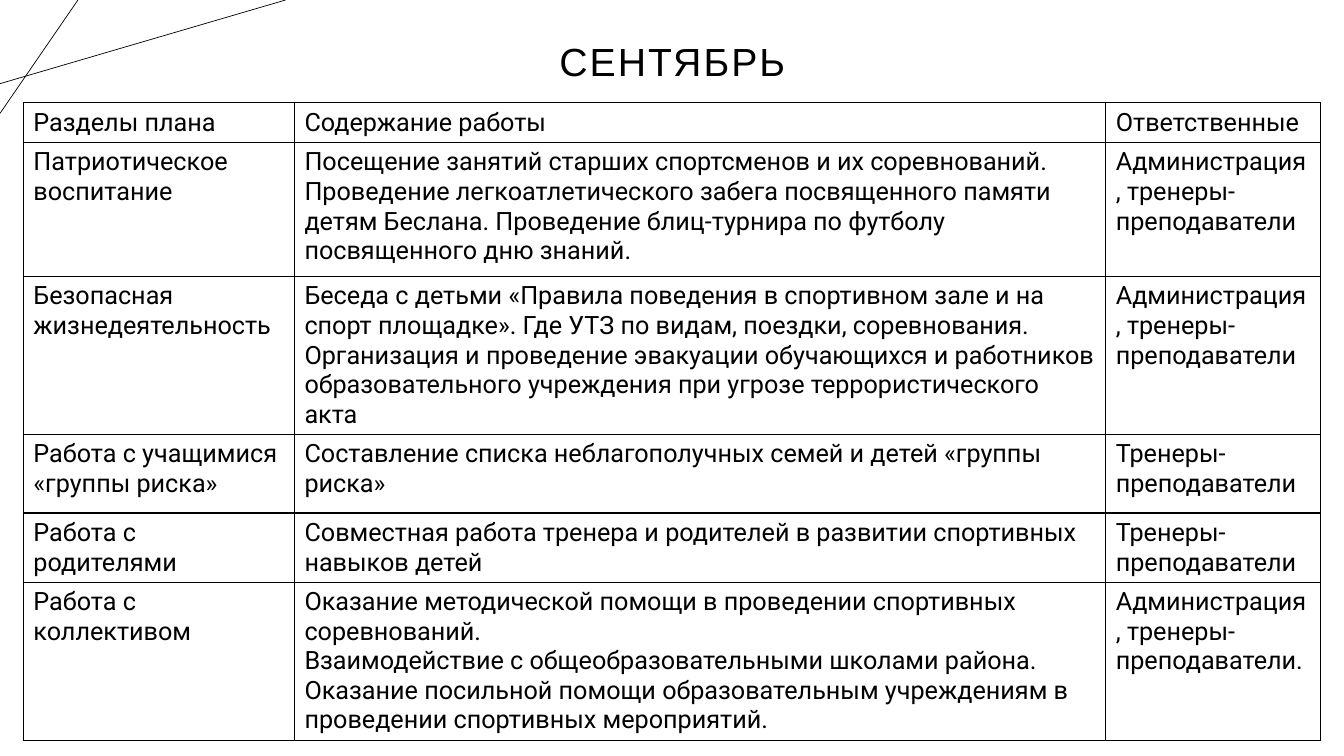
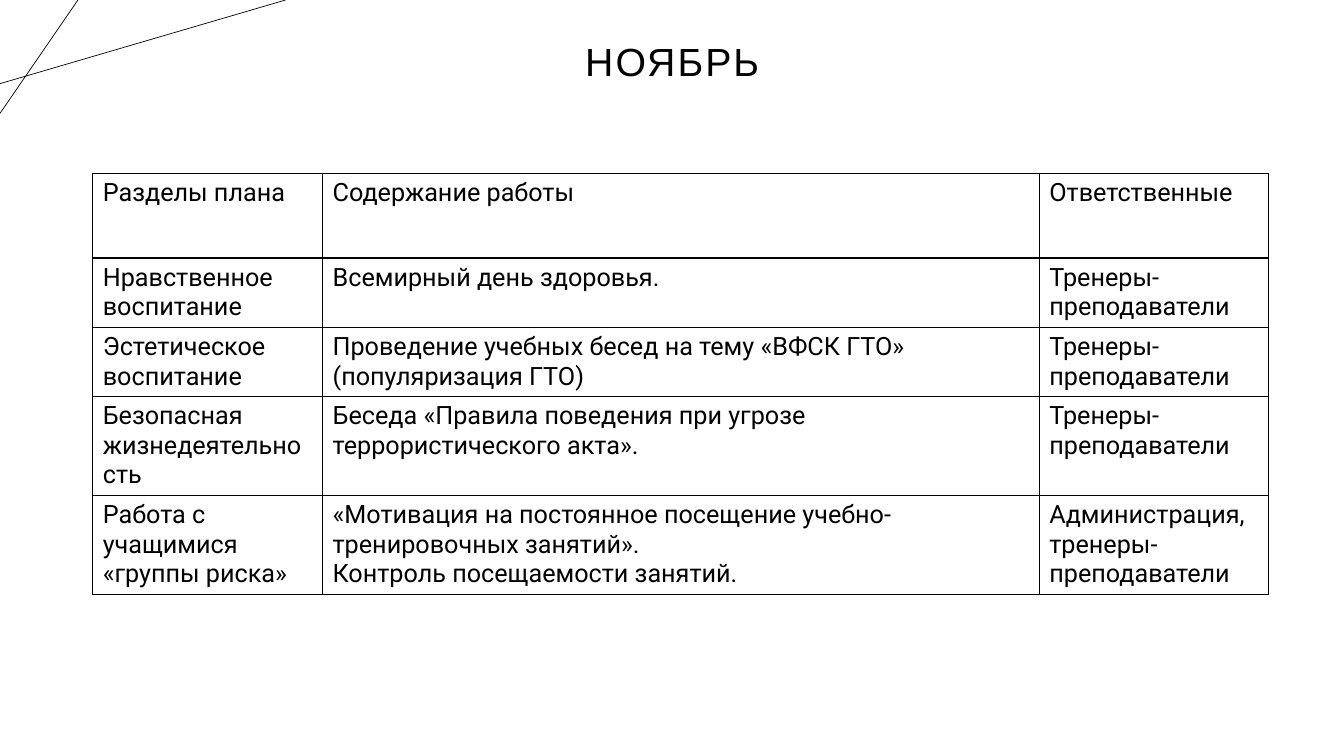
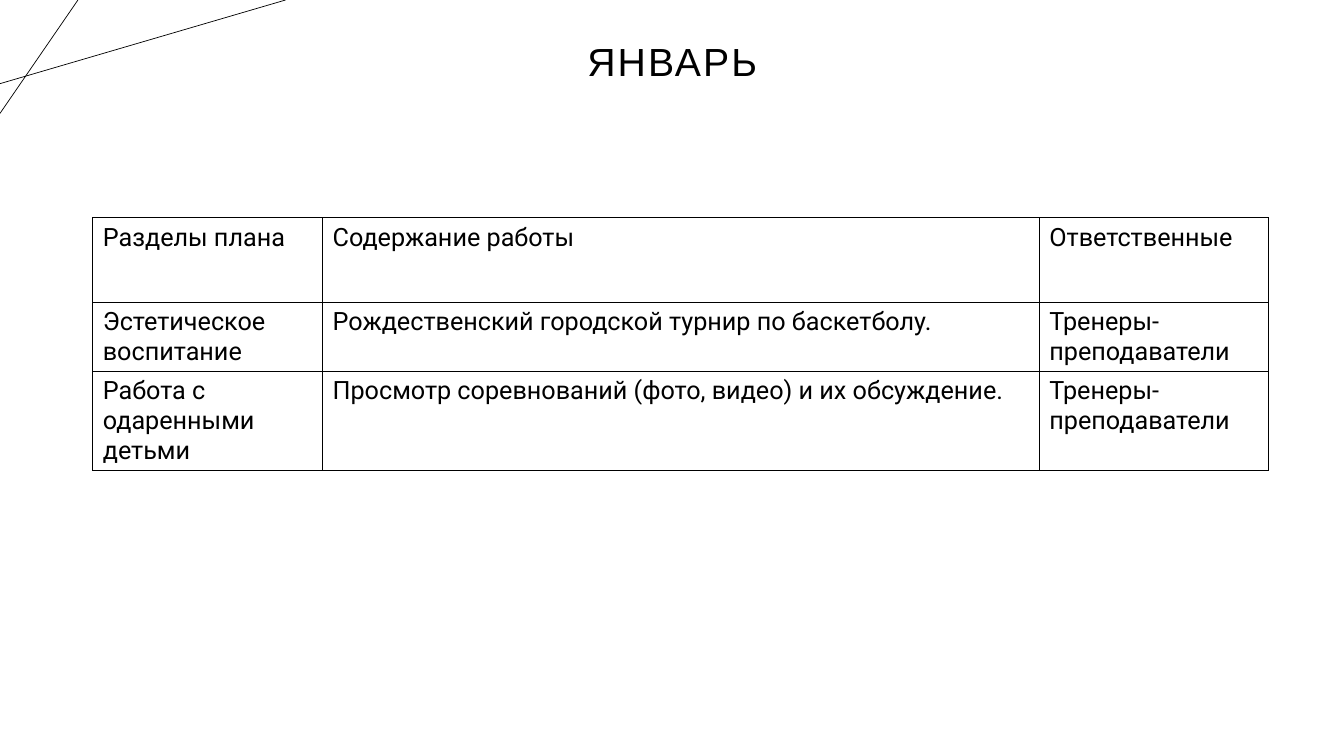
"""Build three monthly plan slides, with lengths in percent of the slide."""
import pptx
import pptx.util
import pptx.dml.color
import pptx.enum.shapes
import pptx.enum.text
import pptx.oxml.ns
import lxml.etree

Pt = pptx.util.Pt
WIDE, HIGH = pptx.util.Inches(13.333), pptx.util.Inches(7.5)
HUES = {"ink": "000000", "page": "FFFFFF"}
FONTS = {"title": "Arial", "body": "Roboto"}
RAYS = [(0, 11.07, 21.25, 0), (5.8, 0, 0, 15)]

HEAD = ("Разделы плана", "Содержание работы", "Ответственные")
COACH = "Тренеры-преподаватели"
STAFF = "Администрация, тренеры-преподаватели"
SAFE = "Безопасная жизнедеятельность"
RISK = "Работа с учащимися «группы риска»"
ART = "Эстетическое воспитание"

BROAD = (20.17, 60.37, 15.97)
SLIM = (17.1, 53.33, 17.03)

PLANS = [
    {
        "month": "СЕНТЯБРЬ", "left": 1.74, "top": 13.6, "cols": BROAD,
        "rows": (3.47, 17.73, 9.6, 10.4, 8.67, 8.67),
        "cells": [
            HEAD,
            ("Патриотическое воспитание",
             "Посещение занятий старших спортсменов и их соревнований. "
             "Проведение легкоатлетического забега посвященного памяти детям Беслана. "
             "Проведение блиц-турнира по футболу посвященного дню знаний.",
             STAFF),
            (SAFE,
             "Беседа с детьми «Правила поведения в спортивном зале и на спорт площадке». "
             "Где УТЗ по видам, поездки, соревнования.\n"
             "Организация и проведение эвакуации обучающихся и работников "
             "образовательного учреждения при угрозе террористического акта",
             STAFF),
            (RISK, "Составление списка неблагополучных семей и детей «группы риска»", COACH),
            ("Работа с родителями",
             "Совместная работа тренера и родителей в развитии спортивных навыков детей",
             COACH),
            ("Работа с коллективом",
             "Оказание методической помощи в проведении спортивных соревнований.\n"
             "Взаимодействие с общеобразовательными школами района.\n"
             "Оказание посильной помощи образовательным учреждениям "
             "в проведении спортивных мероприятий.",
             STAFF + "."),
        ],
    },
    {
        "month": "НОЯБРЬ", "left": 6.9, "top": 22.93, "cols": SLIM,
        "rows": (11.2,) + (8.27,) * 4,
        "cells": [
            HEAD,
            ("Нравственное воспитание", "Всемирный день здоровья.", COACH),
            (ART, "Проведение учебных бесед на тему «ВФСК ГТО» (популяризация ГТО)", COACH),
            (SAFE, "Беседа «Правила поведения при угрозе террористического акта».", COACH),
            (RISK,
             "«Мотивация на постоянное посещение учебно-тренировочных занятий».\n"
             "Контроль посещаемости занятий.",
             STAFF),
        ],
    },
    {
        "month": "ЯНВАРЬ", "left": 6.9, "top": 28.8, "cols": SLIM,
        "rows": (11.2,) + (8.27,) * 2,
        "cells": [
            HEAD,
            (ART, "Рождественский городской турнир по баскетболу.", COACH),
            ("Работа с одаренными детьми",
             "Просмотр соревнований (фото, видео) и их обсуждение.", COACH),
        ],
    },
]


def across(share):
    return round(WIDE * share / 100)


def down(share):
    return round(HIGH * share / 100)


def hue(name):
    return pptx.dml.color.RGBColor.from_string(HUES[name])


def child(node, tag, **attrs):
    return lxml.etree.SubElement(node, pptx.oxml.ns.qn(tag), attrs)


def add_run(para, text, font, size):
    run = para.add_run()
    run.text = text
    run.font.name = FONTS[font]
    run.font.size = Pt(size)
    run.font.color.rgb = hue("ink")
    return run


def add_rays(slide):
    for x1, y1, x2, y2 in RAYS:
        ray = slide.shapes.add_connector(
            pptx.enum.shapes.MSO_CONNECTOR.STRAIGHT,
            across(x1), down(y1), across(x2), down(y2))
        ray.line.color.rgb = hue("ink")
        ray.line.width = Pt(0.5)
        child(ray.element.spPr, "a:effectLst")


def set_title(slide, text):
    title = slide.shapes.title
    title.left, title.top = across(6.9), down(3.47)
    title.width, title.height = across(86.25), down(9.87)
    frame = title.text_frame
    frame.vertical_anchor = pptx.enum.text.MSO_ANCHOR.MIDDLE
    para = frame.paragraphs[0]
    para.alignment = pptx.enum.text.PP_ALIGN.CENTER
    para.line_spacing = 0.9
    run = add_run(para, text, "title", 28)
    run.font._element.set("spc", "150")


def add_edges(cell):
    props = cell._tc.get_or_add_tcPr()
    for side in ("a:lnL", "a:lnR", "a:lnT", "a:lnB"):
        edge = child(props, side, w=str(Pt(1)))
        child(child(edge, "a:solidFill"), "a:srgbClr", val=HUES["ink"])


def fill_cell(cell, text):
    add_edges(cell)
    cell.fill.background()
    frame = cell.text_frame
    for at, line in enumerate(text.split("\n")):
        para = frame.add_paragraph() if at else frame.paragraphs[0]
        add_run(para, line, "body", 18)


def add_plan(slide, plan):
    cols, rows = plan["cols"], plan["rows"]
    table = slide.shapes.add_table(
        len(rows), len(cols), across(plan["left"]), down(plan["top"]),
        across(sum(cols)), down(sum(rows))).table
    table.first_row = table.horz_banding = False
    for col, share in zip(table.columns, cols):
        col.width = across(share)
    for row, share, texts in zip(table.rows, rows, plan["cells"]):
        row.height = down(share)
        for cell, text in zip(row.cells, texts):
            fill_cell(cell, text)


def main():
    deck = pptx.Presentation()
    deck.slide_width, deck.slide_height = WIDE, HIGH
    back = deck.slide_master.background.fill
    back.solid()
    back.fore_color.rgb = hue("page")
    for plan in PLANS:
        slide = deck.slides.add_slide(deck.slide_layouts[5])
        add_rays(slide)
        set_title(slide, plan["month"])
        add_plan(slide, plan)
    deck.save("out.pptx")


if __name__ == "__main__":
    main()
